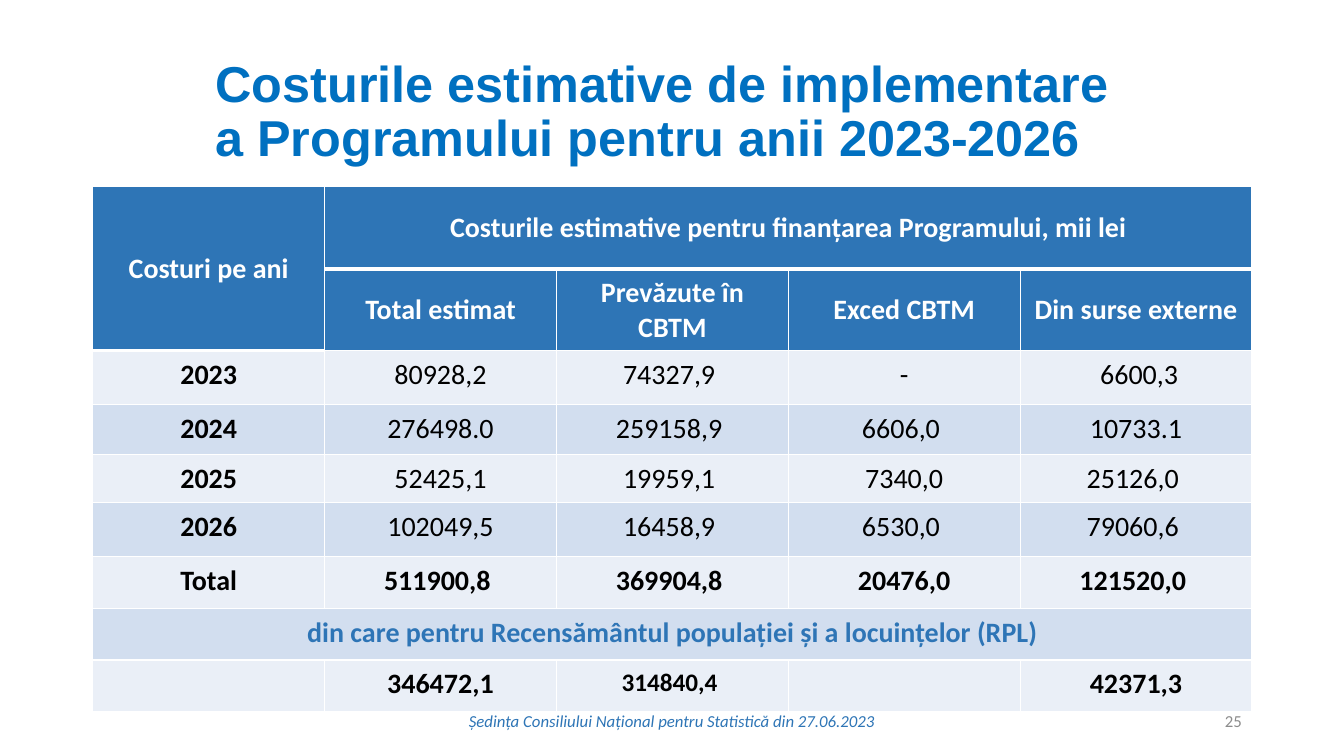
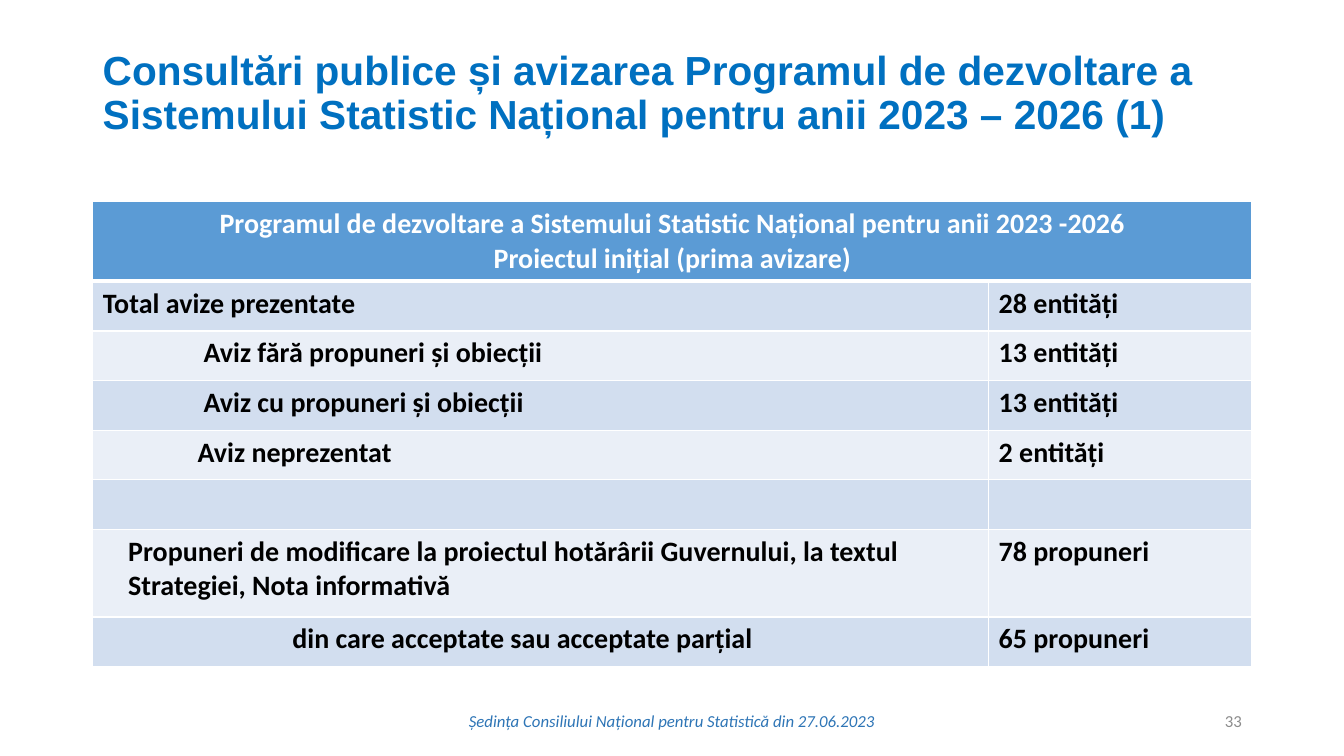
"""Builds two slides on the programme's costs and its public consultation."""
from lxml import etree
from pptx import Presentation
from pptx.dml.color import RGBColor
from pptx.enum.text import MSO_ANCHOR, PP_ALIGN
from pptx.oxml.ns import qn
from pptx.util import Cm, Pt

LEFT, CENTER, RIGHT = PP_ALIGN.LEFT, PP_ALIGN.CENTER, PP_ALIGN.RIGHT
TOP, MIDDLE = MSO_ANCHOR.TOP, MSO_ANCHOR.MIDDLE

COLORS = {
    "title": "0070C0",
    "deep": "2E75B6",
    "header": "5B9BD5",
    "pale": "EAEFF7",
    "band": "D2DEEF",
    "white": "FFFFFF",
    "black": "000000",
    "number": "8C8C8C",
}
MARGIN = 2.34
CONTENT_WIDTH = 29.21
FOOTER = "Ședința Consiliului Național pentru Statistică din 27.06.2023"

COST_GROUP = "Costurile estimative pentru finanțarea Programului, mii lei"
COST_HEADS = ["Total estimat", "Prevăzute în CBTM", "Exced CBTM", "Din surse externe"]
COSTS = [
    ["2023", "80928,2", "74327,9 ", "-", " 6600,3"],
    ["2024", "276498.0", "259158,9 ", "6606,0 ", "10733.1"],
    ["2025", "52425,1", "19959,1 ", "7340,0", "25126,0 "],
    ["2026", "102049,5", "16458,9 ", "6530,0 ", "79060,6 "],
    ["Total", "511900,8 ", "369904,8 ", "20476,0", "121520,0 "],
]
CENSUS = "din care pentru Recensământul populației și a locuințelor (RPL)"
CENSUS_COSTS = ["", "346472,1", "314840,4 ", "", "42371,3"]

OPINION_HEADS = [
    "Programul de dezvoltare a Sistemului Statistic Național pentru anii 2023 -2026",
    "Proiectul inițial (prima avizare)",
]
OPINIONS = [
    ("Total avize prezentate", "28 entități", 0),
    ("Aviz fără propuneri și obiecții", "13 entități", 2.54),
    ("Aviz cu propuneri și obiecții", "13 entități", 2.54),
    ("Aviz neprezentat", "2 entități", 2.39),
    ("", "", 0),
    ("Propuneri de modificare la proiectul hotărârii Guvernului, la textul "
     "Strategiei, Nota informativă", "78 propuneri", 0.64),
    ("din care acceptate sau acceptate parțial", "65 propuneri", 4.78),
]


def rgb(name):
    """Return the named colour."""
    return RGBColor.from_string(COLORS[name])


def add_run(paragraph, text, size, color, bold=False, italic=False, font="Calibri"):
    """Append one formatted run to a paragraph."""
    run = paragraph.add_run()
    run.text = text
    run.font.name = font
    run.font.size = Pt(size)
    run.font.bold = bold
    run.font.italic = italic
    run.font.color.rgb = rgb(color)


def add_label(slide, left, top, width, height, align):
    """Add a wrapping, vertically centred text box and return its paragraph."""
    frame = slide.shapes.add_textbox(Cm(left), Cm(top), Cm(width), Cm(height)).text_frame
    frame.word_wrap = True
    frame.vertical_anchor = MIDDLE
    paragraph = frame.paragraphs[0]
    paragraph.alignment = align
    return paragraph


def add_title(slide, lines, left, width, height, size):
    """Add the slide title, one line break between lines."""
    title = add_label(slide, left, 1.02, width, height, LEFT)
    title.line_spacing = 0.9
    for index, line in enumerate(lines):
        if index:
            title.add_line_break()
        add_run(title, line, size, "title", bold=True, font="Arial")


def add_footer(slide, number):
    """Add the meeting line and the slide number."""
    meeting = add_label(slide, 11.22, 17.65, 11.43, 1.02, CENTER)
    add_run(meeting, FOOTER, 12, "deep", italic=True)
    page = add_label(slide, 23.93, 17.65, 7.62, 1.02, RIGHT)
    add_run(page, str(number), 12, "number")


def add_border(cell, side, width):
    """Draw one white cell edge."""
    line = etree.SubElement(cell._tc.get_or_add_tcPr(), qn(f"a:{side}"), w=str(Pt(width)))
    fill = etree.SubElement(line, qn("a:solidFill"))
    etree.SubElement(fill, qn("a:srgbClr"), val=COLORS["white"])


def style_cell(cell, row, column, header_rows, header_color, insets):
    """Set the borders, fill, margins and anchor of a cell by its place."""
    is_header = row < header_rows
    heavy = row == 0 or (is_header and column == 0)
    add_border(cell, "lnL", 1)
    add_border(cell, "lnR", 1)
    if row == 0:
        add_border(cell, "lnT", 1)
    add_border(cell, "lnB", 3 if heavy else 1)
    cell.fill.solid()
    band = "band" if row % 2 else "pale"
    cell.fill.fore_color.rgb = rgb(header_color if is_header else band)
    cell.margin_left = cell.margin_right = Cm(insets[0])
    cell.margin_top = cell.margin_bottom = Cm(insets[1])
    cell.vertical_anchor = MIDDLE if is_header else TOP


def add_grid(slide, top, widths, heights, header_rows, header_color, insets):
    """Add a styled empty table and return it."""
    table = slide.shapes.add_table(
        len(heights), len(widths), Cm(MARGIN), Cm(top),
        Cm(CONTENT_WIDTH), Cm(sum(heights))).table
    table.first_row = table.horz_banding = False
    for column, width in zip(table.columns, widths):
        column.width = Cm(width)
    for row, height in enumerate(heights):
        table.rows[row].height = Cm(height)
        for column in range(len(widths)):
            style_cell(table.cell(row, column), row, column,
                       header_rows, header_color, insets)
    return table


def write_cell(cell, lines, color="black", align=CENTER, bold=True, size=20, indent=0):
    """Write one paragraph per line into a cell."""
    for index, line in enumerate(lines):
        frame = cell.text_frame
        paragraph = frame.add_paragraph() if index else frame.paragraphs[0]
        paragraph.alignment = align
        if indent:
            paragraph._p.get_or_add_pPr().set("marL", str(Cm(indent)))
        if line:
            add_run(paragraph, line, size, color, bold)


def build_costs(slide):
    """Build the slide of estimated costs by year."""
    add_title(slide, ["Costurile estimative de implementare ",
                      "a Programului pentru anii 2023-2026"], 5.18, 24.84, 3.68, 36)
    heights = [2.08, 1.8, 1.35, 1.27, 1.19, 1.37, 1.3, 1.3, 1.3]
    table = add_grid(slide, 4.7, [CONTENT_WIDTH / 5] * 5, heights, 2, "deep", (0.18, 0.18))
    table.cell(0, 0).merge(table.cell(1, 0))
    table.cell(0, 1).merge(table.cell(0, 4))
    table.cell(7, 0).merge(table.cell(7, 4))
    write_cell(table.cell(0, 0), ["Costuri pe ani"], "white")
    write_cell(table.cell(0, 1), [COST_GROUP], "white")
    for column, head in enumerate(COST_HEADS, 1):
        write_cell(table.cell(1, column), [head], "white")
    for row, values in enumerate(COSTS, 2):
        for column, value in enumerate(values):
            bold = column == 0 or values[0] == "Total"
            write_cell(table.cell(row, column), [value], bold=bold)
    write_cell(table.cell(7, 0), [CENSUS], "deep")
    for column, value in enumerate(CENSUS_COSTS):
        write_cell(table.cell(8, column), [value], size=18 if column == 2 else 20)
    add_footer(slide, 25)


def build_opinions(slide):
    """Build the slide of opinions received in the consultation."""
    add_title(slide, ["Consultări publice și avizarea Programul de dezvoltare a "
                      "Sistemului Statistic Național pentru anii 2023 – 2026 (1)"],
              MARGIN, CONTENT_WIDTH, 2.72, 29)
    heights = [2.01] + [1.25] * 5 + [2.21, 1.25]
    table = add_grid(slide, 5.08, [22.58, 6.63], heights, 1, "header", (0.25, 0.13))
    table.cell(0, 0).merge(table.cell(0, 1))
    write_cell(table.cell(0, 0), OPINION_HEADS, "white")
    for row, (topic, count, indent) in enumerate(OPINIONS, 1):
        write_cell(table.cell(row, 0), [topic], align=LEFT, indent=indent)
        write_cell(table.cell(row, 1), [count], align=LEFT)
    add_footer(slide, 33)


def main():
    """Build and save the presentation."""
    deck = Presentation()
    deck.slide_width, deck.slide_height = Cm(33.87), Cm(19.05)
    blank = deck.slide_layouts[6]
    for build in (build_costs, build_opinions):
        build(deck.slides.add_slide(blank))
    deck.save("out.pptx")


if __name__ == "__main__":
    main()
